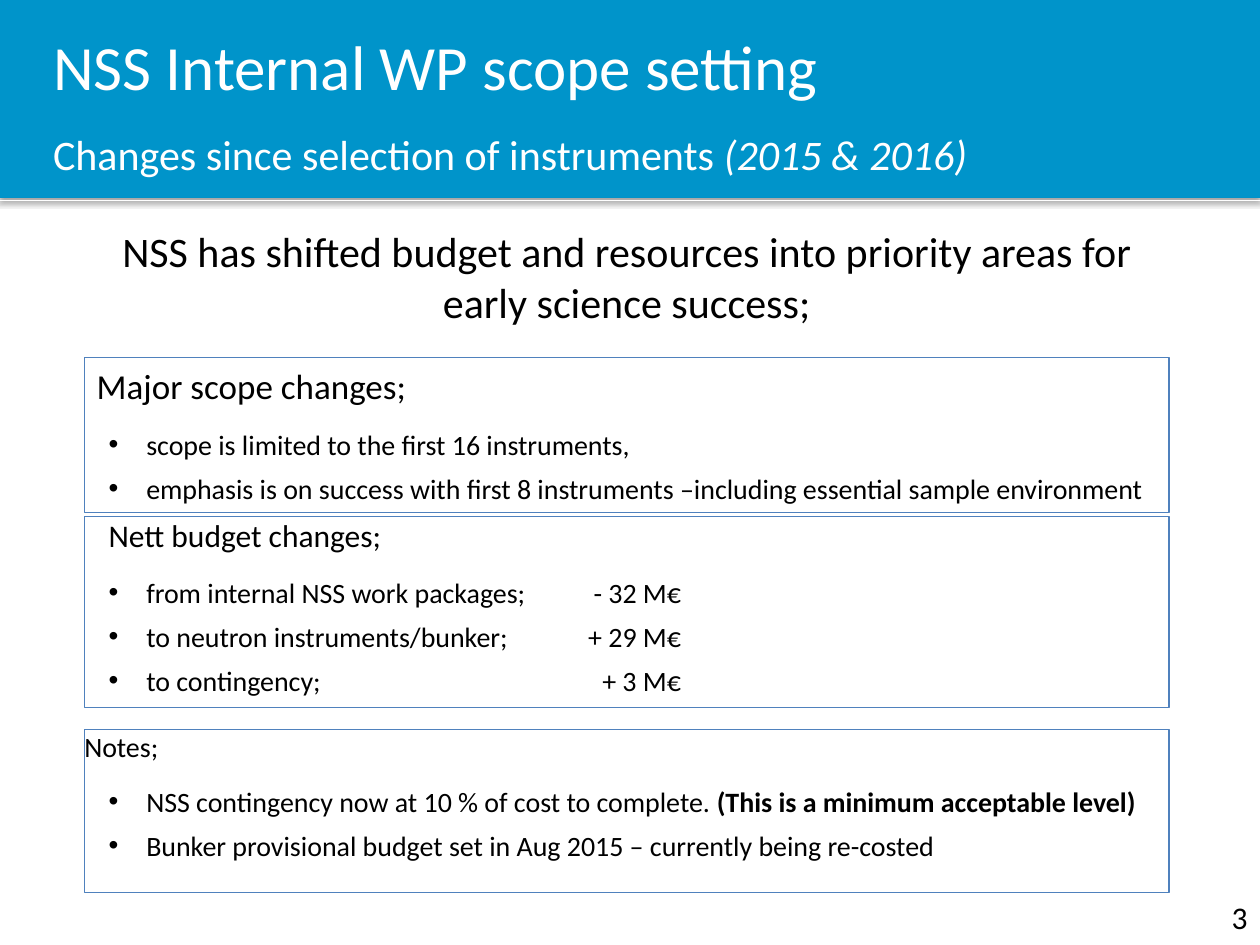
from lxml.etree import SubElement
from pptx import Presentation
from pptx.dml.color import RGBColor
from pptx.enum.shapes import MSO_CONNECTOR, MSO_SHAPE
from pptx.enum.text import MSO_ANCHOR, PP_ALIGN
from pptx.oxml.ns import qn
from pptx.util import Cm, Pt

BLUE, BORDER, WHITE, BLACK = "0094CA", "4F81BD", "FFFFFF", "000000"
BOX_LEFT, BOX_WIDTH = 1.7, 21.87
HANGING = 0.76


def rgb(value):
    return RGBColor.from_string(value)


def add_shadow(part, opacity, distance):
    effects = SubElement(part._element.spPr, qn("a:effectLst"))
    shadow = SubElement(effects, qn("a:outerShdw"), blurRad=str(Pt(3.1)),
                        dist=str(Pt(distance)), dir="5400000", rotWithShape="0")
    color = SubElement(shadow, qn("a:srgbClr"), val=BLACK)
    SubElement(color, qn("a:alpha"), val=str(opacity * 1000))


def set_frame(part, anchor=MSO_ANCHOR.TOP, inset=(0.25, 0.13)):
    """Prepare the text frame; inset is (sides, top and bottom) in cm."""
    frame = part.text_frame
    sides, ends = map(Cm, inset)
    settings = {"word_wrap": True, "vertical_anchor": anchor,
                "margin_left": sides, "margin_right": sides,
                "margin_top": ends, "margin_bottom": ends}
    for name, value in settings.items():
        setattr(frame, name, value)
    return frame


def add_run(paragraph, text, size, color=BLACK, **styles):
    run = paragraph.add_run()
    run.text = text
    run.font.color.rgb = rgb(color)
    for name, value in {"name": "Calibri", "size": Pt(size), **styles}.items():
        setattr(run.font, name, value)


def set_indent(paragraph, left, bullet=False, right_tab=None):
    props = paragraph._p.get_or_add_pPr()
    props.set("marL", str(Cm(left)))
    props.set("indent", str(-Cm(HANGING)))
    if bullet:
        SubElement(props, qn("a:buFont"), typeface="Arial")
        SubElement(props, qn("a:buChar"), char="•")
    if right_tab:
        tabs = SubElement(props, qn("a:tabLst"))
        SubElement(tabs, qn("a:tab"), pos=str(Cm(right_tab)), algn="r")


def add_header(slide, left, top, width, height):
    # Blue band
    band = slide.shapes.add_shape(MSO_SHAPE.RECTANGLE, Cm(left), Cm(top),
                                  Cm(width), Cm(height))
    band.fill.solid()
    band.fill.fore_color.rgb = rgb(BLUE)
    band.line.fill.background()
    add_shadow(band, 35, 1.8)

    # White rule under the band
    rule_top = Cm(top + height + 0.05)
    rule = slide.shapes.add_connector(MSO_CONNECTOR.STRAIGHT, Cm(left - 0.9), rule_top,
                                      Cm(left + width + 0.63), rule_top)
    rule.line.color.rgb = rgb(WHITE)
    rule.line.width = Pt(0.5)
    add_shadow(rule, 38, 1.6)

    # Title and subtitle
    title = slide.shapes.add_textbox(Cm(left + 1.07), Cm(top), Cm(20.17), Cm(3.4))
    heading = set_frame(title, MSO_ANCHOR.MIDDLE, (0, 0)).paragraphs[0]
    heading.line_spacing = 1.5
    add_run(heading, "NSS Internal WP scope setting", 36, WHITE)
    heading.add_line_break()
    add_run(heading, "Changes since selection of instruments ", 24, WHITE)
    add_run(heading, "(2015 & 2016)", 24, WHITE, italic=True)


def add_text(slide, left, top, width, height, text, size, align, anchor=MSO_ANCHOR.TOP):
    box = slide.shapes.add_textbox(Cm(left), Cm(top), Cm(width), Cm(height))
    paragraph = set_frame(box, anchor).paragraphs[0]
    paragraph.alignment = align
    add_run(paragraph, text, size)


def add_panel(slide, left, top, width, height, heading, size, bullets, bullet_left=1.25,
              heading_left=None, inset=(0, 0), right_tab=None):
    """Outlined box with a heading; each bullet is (text, bold ending)."""
    panel = slide.shapes.add_shape(MSO_SHAPE.RECTANGLE, Cm(left), Cm(top),
                                   Cm(width), Cm(height))
    panel.shadow.inherit = False
    panel.fill.background()
    panel.line.color.rgb = rgb(BORDER)
    panel.line.width = Pt(0.75)
    frame = set_frame(panel, inset=inset)

    # Heading
    first = frame.paragraphs[0]
    first.alignment = PP_ALIGN.LEFT
    first.space_after = Pt(6)
    if heading_left:
        set_indent(first, heading_left)
    add_run(first, heading, size)

    # Bullets
    for text, ending in bullets:
        item = frame.add_paragraph()
        item.alignment = PP_ALIGN.LEFT
        item.space_before = Pt(6)
        set_indent(item, bullet_left, True, right_tab)
        add_run(item, text, 16)
        if ending:
            add_run(item, ending, 16, bold=True)


def main():
    deck = Presentation()
    deck.slide_width, deck.slide_height = Cm(25.4), Cm(19.05)
    slide = deck.slides.add_slide(deck.slide_layouts[6])

    add_header(slide, 0, 0, 25.4, 3.99)
    add_text(slide, BOX_LEFT, 4.42, BOX_WIDTH, 2.31,
             "NSS has shifted budget and resources into priority areas for early science success;",
             24, PP_ALIGN.CENTER)

    add_panel(slide, BOX_LEFT, 7.21, BOX_WIDTH, 3.12, "Major scope changes;", 20, [
        ("scope is limited to the first 16 instruments,", ""),
        ("emphasis is on success with first 8 instruments "
         "–including essential sample environment", ""),
    ], bullet_left=1.0, inset=(0.25, 0.13))

    add_panel(slide, BOX_LEFT, 10.41, BOX_WIDTH, 3.86, "Nett budget changes;", 18, [
        ("from internal NSS work packages;\t- 32 M€", ""),
        ("to neutron instruments/bunker;\t+ 29 M€", ""),
        ("to contingency;\t+ 3 M€", ""),
    ], heading_left=1.25, right_tab=12.03)

    add_panel(slide, BOX_LEFT, 14.71, BOX_WIDTH, 3.28, "Notes;", 16, [
        ("NSS contingency now at 10 % of cost to complete. ",
         "(This is a minimum acceptable level)"),
        ("Bunker provisional budget set in Aug 2015 – currently being re-costed", ""),
    ])

    # Slide number
    add_text(slide, 19.48, 17.98, 5.92, 1.02, "3", 18, PP_ALIGN.RIGHT, MSO_ANCHOR.MIDDLE)

    deck.save("out.pptx")


if __name__ == "__main__":
    main()
